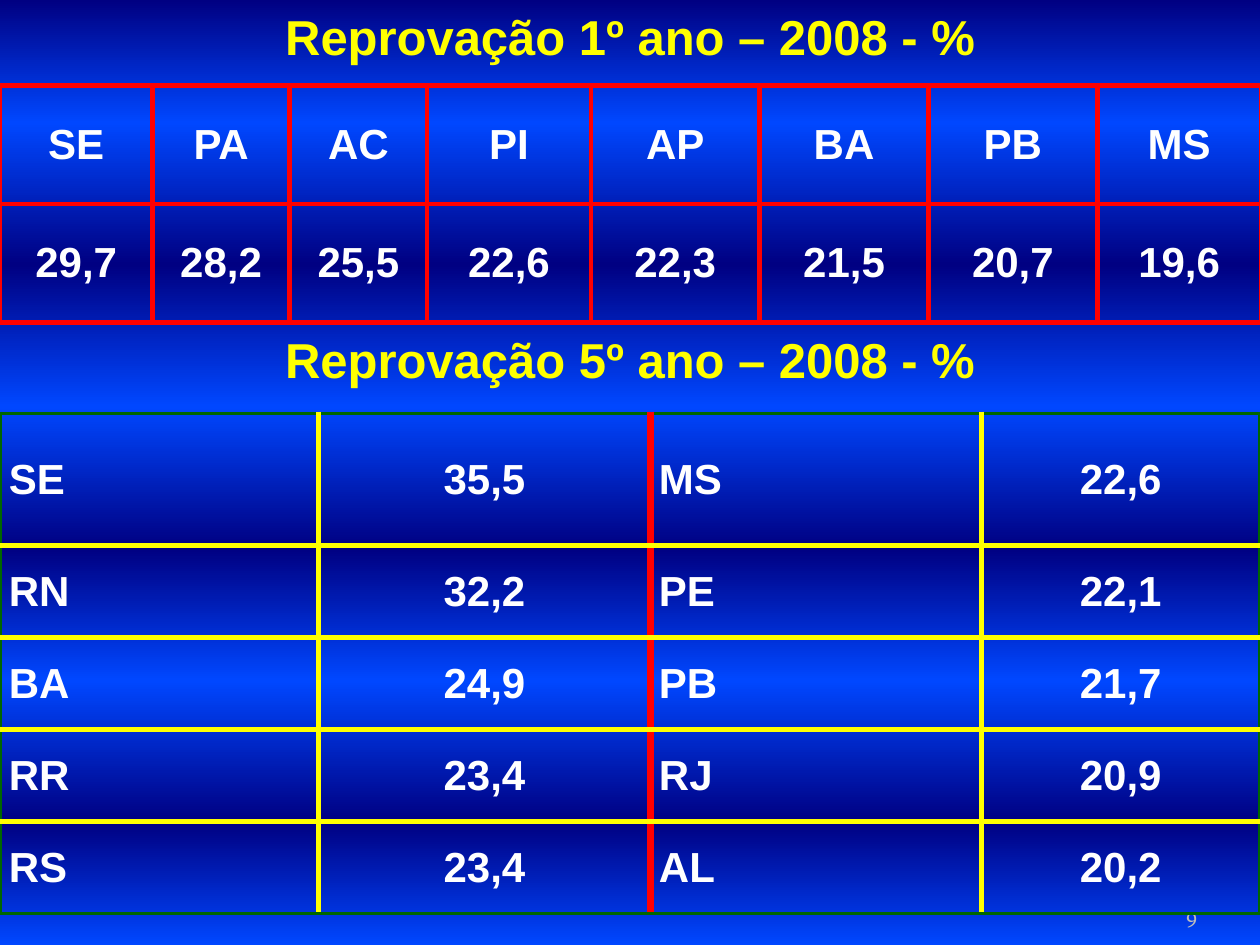
from dataclasses import dataclass
from typing import Callable

from lxml.etree import SubElement
from pptx import Presentation
from pptx.dml.color import RGBColor
from pptx.enum.text import MSO_ANCHOR as Anchor, PP_ALIGN as Align
from pptx.oxml.ns import qn
from pptx.util import Inches, Pt

NAVY, BLUE = "000082", "0047FF"
YELLOW, RED, GREEN, WHITE, GREY = "FFFF00", "FF0000", "006600", "FFFFFF", "BDBDBD"
GRADIENT_STOPS = (0, 13, 28, 43, 58, 72, 87, 100)


@dataclass(frozen=True)
class Border:
    color: str
    width: float


@dataclass(frozen=True)
class Grid:
    top: float
    columns: list[float]
    heights: list[float]
    rows: list[list[str]]
    aligns: list[Align]
    # Border of a vertical or horizontal rule, by its index from the left or top
    vertical: Callable[[int], Border]
    horizontal: Callable[[int], Border]


def rgb(color: str) -> RGBColor:
    return RGBColor.from_string(color)


def write(frame, text: str, *, size: float, color: str, font: str = "Arial",
          bold: bool = True, align: Align = Align.CENTER,
          anchor: Anchor = Anchor.TOP) -> None:
    frame.word_wrap = True
    frame.vertical_anchor = anchor
    para = frame.paragraphs[0]
    para.alignment = align
    span = para.add_run()
    span.text = text
    span.font.name, span.font.size, span.font.bold = font, Pt(size), bold
    span.font.color.rgb = rgb(color)


def place(box, left: float, top: float, width: float, height: float) -> None:
    box.left, box.top = Inches(left), Inches(top)
    box.width, box.height = Inches(width), Inches(height)


def paint_background(page) -> None:
    page.background.fill.gradient()
    stops = page._element.find(".//" + qn("a:gsLst"))
    for stop in list(stops):
        stops.remove(stop)
    for index, position in enumerate(GRADIENT_STOPS):
        stop = SubElement(stops, qn("a:gs"), pos=str(position * 1000))
        SubElement(stop, qn("a:srgbClr"), val=BLUE if index % 2 else NAVY)
    page._element.find(".//" + qn("a:lin")).set("ang", str(90 * 60000))


def add_border(cell, side: str, border: Border) -> None:
    line = SubElement(cell._tc.get_or_add_tcPr(), qn(f"a:ln{side}"),
                      w=str(Pt(border.width)))
    fill = SubElement(line, qn("a:solidFill"))
    SubElement(fill, qn("a:srgbClr"), val=border.color)


def draw_grid(page, grid: Grid) -> None:
    table = page.shapes.add_table(
        len(grid.rows), len(grid.columns), Inches(0), Inches(grid.top),
        Inches(sum(grid.columns)), Inches(sum(grid.heights))).table
    table.first_row = table.horz_banding = False
    for column, width in zip(table.columns, grid.columns):
        column.width = Inches(width)
    for y, (row, height) in enumerate(zip(grid.rows, grid.heights)):
        table.rows[y].height = Inches(height)
        for x, text in enumerate(row):
            cell = table.cell(y, x)
            cell.margin_left = cell.margin_right = Inches(0.07)
            cell.margin_top = cell.margin_bottom = 0
            cell.vertical_anchor = Anchor.MIDDLE
            write(cell.text_frame, text, size=24, color=WHITE,
                  align=grid.aligns[x], anchor=None)
            add_border(cell, "L", grid.vertical(x))
            add_border(cell, "R", grid.vertical(x + 1))
            add_border(cell, "T", grid.horizontal(y))
            add_border(cell, "B", grid.horizontal(y + 1))
            cell.fill.background()


THIN_GREEN, YELLOW_RULE = Border(GREEN, 2.25), Border(YELLOW, 3)
RED_RULE, THICK_RED = Border(RED, 3), Border(RED, 4.5)

FIRST_YEAR = Grid(
    top=0.68,
    columns=[1.21, 1.09, 1.09, 1.3, 1.34, 1.34, 1.34, 1.3],
    heights=[0.94, 0.94],
    rows=[["SE", "PA", "AC", "PI", "AP", "BA", "PB", "MS"],
          ["29,7", "28,2", "25,5", "22,6", "22,3", "21,5", "20,7", "19,6"]],
    aligns=[Align.CENTER] * 8,
    vertical=lambda index: RED_RULE,
    horizontal=lambda index: RED_RULE,
)

FIFTH_YEAR = Grid(
    top=3.28,
    columns=[2.53, 2.63, 2.63, 2.21],
    heights=[1.05] + [0.73] * 4,
    rows=[["SE", "35,5", "MS", "22,6"],
          ["RN", "32,2", "PE", "22,1"],
          ["BA", "24,9", "PB", "21,7"],
          ["RR", "23,4", "RJ", "20,9"],
          ["RS", "23,4", "AL", "20,2"]],
    aligns=[Align.JUSTIFY, Align.CENTER] * 2,
    vertical=lambda index: {0: THIN_GREEN, 2: THICK_RED, 4: THIN_GREEN}.get(
        index, YELLOW_RULE),
    horizontal=lambda index: THIN_GREEN if index in (0, 5) else YELLOW_RULE,
)


def main() -> None:
    deck = Presentation()
    deck.slide_width, deck.slide_height = Inches(10), Inches(7.5)
    page = deck.slides.add_slide(deck.slide_layouts[5])
    paint_background(page)

    # Page number
    number = page.shapes.add_textbox(0, 0, 0, 0)
    place(number, 8.67, 7.02, 0.83, 0.4)
    number.text_frame.margin_left = number.text_frame.margin_right = 0
    write(number.text_frame, "9", size=12, color=GREY, font="Vollkorn",
          bold=False, align=Align.RIGHT, anchor=Anchor.BOTTOM)

    # Headings: the slide title and the title of the second table
    second_heading = page.shapes.add_textbox(0, 0, 0, 0)
    for box, top, year in ((page.shapes.title, 0, "1º"), (second_heading, 2.57, "5º")):
        place(box, 0, top, 10, 0.57)
        write(box.text_frame, f"Reprovação {year} ano – 2008 - %",
              size=28, color=YELLOW)

    # Tables
    for grid in (FIRST_YEAR, FIFTH_YEAR):
        draw_grid(page, grid)

    deck.save("out.pptx")


if __name__ == "__main__":
    main()
